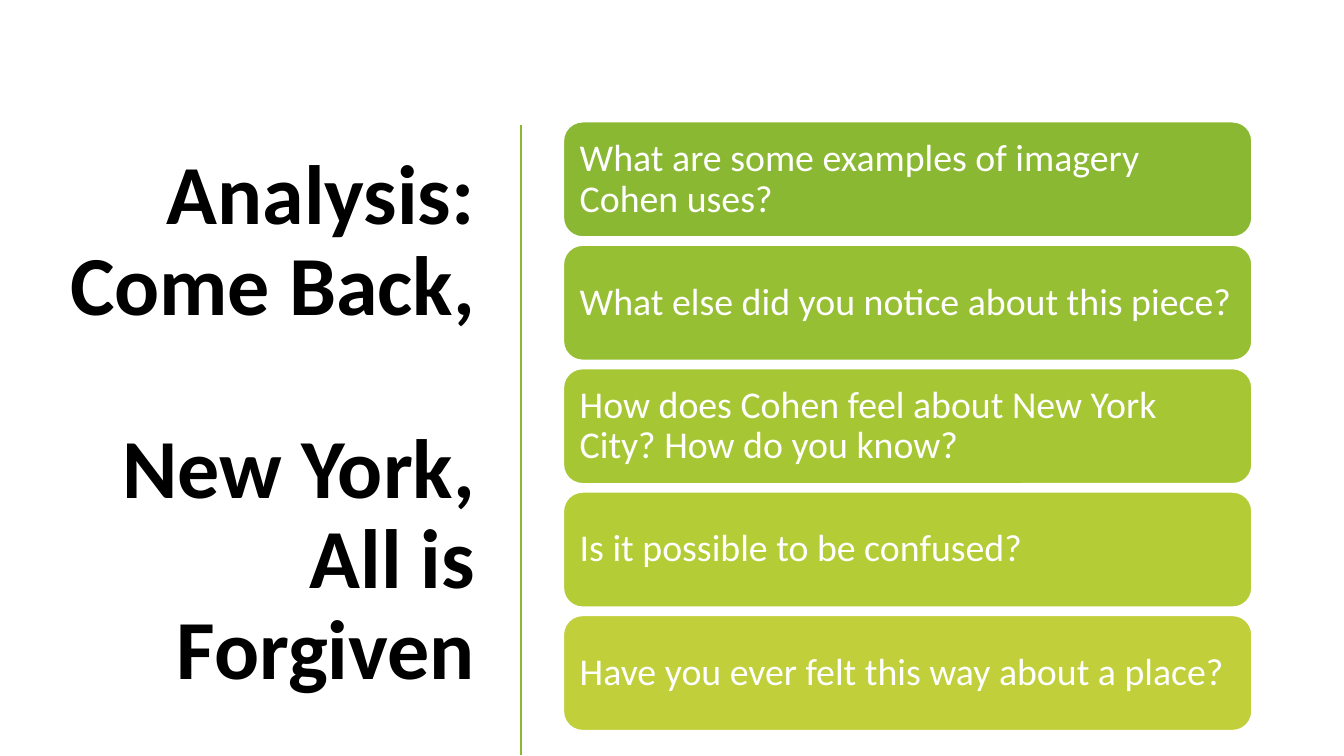
import pptx
import pptx.dml.color
import pptx.enum.shapes
import pptx.enum.text
import pptx.oxml
import pptx.oxml.ns
import pptx.util

Cm = pptx.util.Cm
Pt = pptx.util.Pt
RGBColor = pptx.dml.color.RGBColor

BLACK = RGBColor(0x00, 0x00, 0x00)
WHITE = RGBColor(0xFF, 0xFF, 0xFF)
GREEN = RGBColor(0x8A, 0xB8, 0x33)
LEAF = RGBColor(0x97, 0xBF, 0x33)
LIME = RGBColor(0xA6, 0xC6, 0x34)
PEAR = RGBColor(0xB4, 0xCC, 0x35)
OLIVE = RGBColor(0xC0, 0xCF, 0x3A)

TITLE_LINES = [("Analysis: Come Back,", 0), ("New York, All is Forgiven", 66)]
QUESTIONS = [
    ("What are some examples of imagery Cohen uses?", GREEN),
    ("What else did you notice about this piece?", LEAF),
    ("How does Cohen feel about New York City? How do you know?", LIME),
    ("Is it possible to be confused?", PEAR),
    ("Have you ever felt this way about a place?", OLIVE),
]
CARD_TOP = 3.07
CARD_PITCH = 3.11


def style_paragraph(paragraph, text, size, color, alignment):
    paragraph.text = text
    paragraph.alignment = alignment
    paragraph.line_spacing = 0.9
    paragraph.font.name = "Calibri"
    paragraph.font.size = Pt(size)
    paragraph.font.color.rgb = color


presentation = pptx.Presentation()
presentation.slide_width = Cm(33.87)
presentation.slide_height = Cm(19.05)
slide = presentation.slides.add_slide(presentation.slide_layouts[6])

title = slide.shapes.add_textbox(Cm(1.27), Cm(2.97), Cm(10.95), Cm(15.47)).text_frame
title.word_wrap = True
title.vertical_anchor = pptx.enum.text.MSO_ANCHOR.MIDDLE
for index, (line, gap) in enumerate(TITLE_LINES):
    paragraph = title.add_paragraph() if index else title.paragraphs[0]
    style_paragraph(paragraph, line, 60, BLACK, pptx.enum.text.PP_ALIGN.RIGHT)
    paragraph.font.bold = True
    paragraph.space_before = Pt(gap)

divider = slide.shapes.add_connector(
    pptx.enum.shapes.MSO_CONNECTOR.STRAIGHT, Cm(13.13), Cm(3.15), Cm(13.13), Cm(19.02)
)
divider.line.color.rgb = GREEN
divider.line.width = Pt(2)
divider._element.spPr.append(pptx.oxml.parse_xml(
    f"<a:effectLst {pptx.oxml.ns.nsdecls('a')}/>"
))

for index, (question, color) in enumerate(QUESTIONS):
    card = slide.shapes.add_shape(
        pptx.enum.shapes.MSO_SHAPE.ROUNDED_RECTANGLE,
        Cm(14.2), Cm(CARD_TOP + index * CARD_PITCH), Cm(17.35), Cm(2.9),
    )
    card.shadow.inherit = False
    card.fill.solid()
    card.fill.fore_color.rgb = color
    card.line.color.rgb = WHITE
    card.line.width = Pt(1)
    frame = card.text_frame
    frame.word_wrap = True
    frame.vertical_anchor = pptx.enum.text.MSO_ANCHOR.MIDDLE
    frame.margin_left = frame.margin_right = Cm(0.27)
    frame.margin_top = frame.margin_bottom = Cm(0.27)
    style_paragraph(frame.paragraphs[0], question, 27, WHITE, pptx.enum.text.PP_ALIGN.LEFT)

presentation.save("out.pptx")
